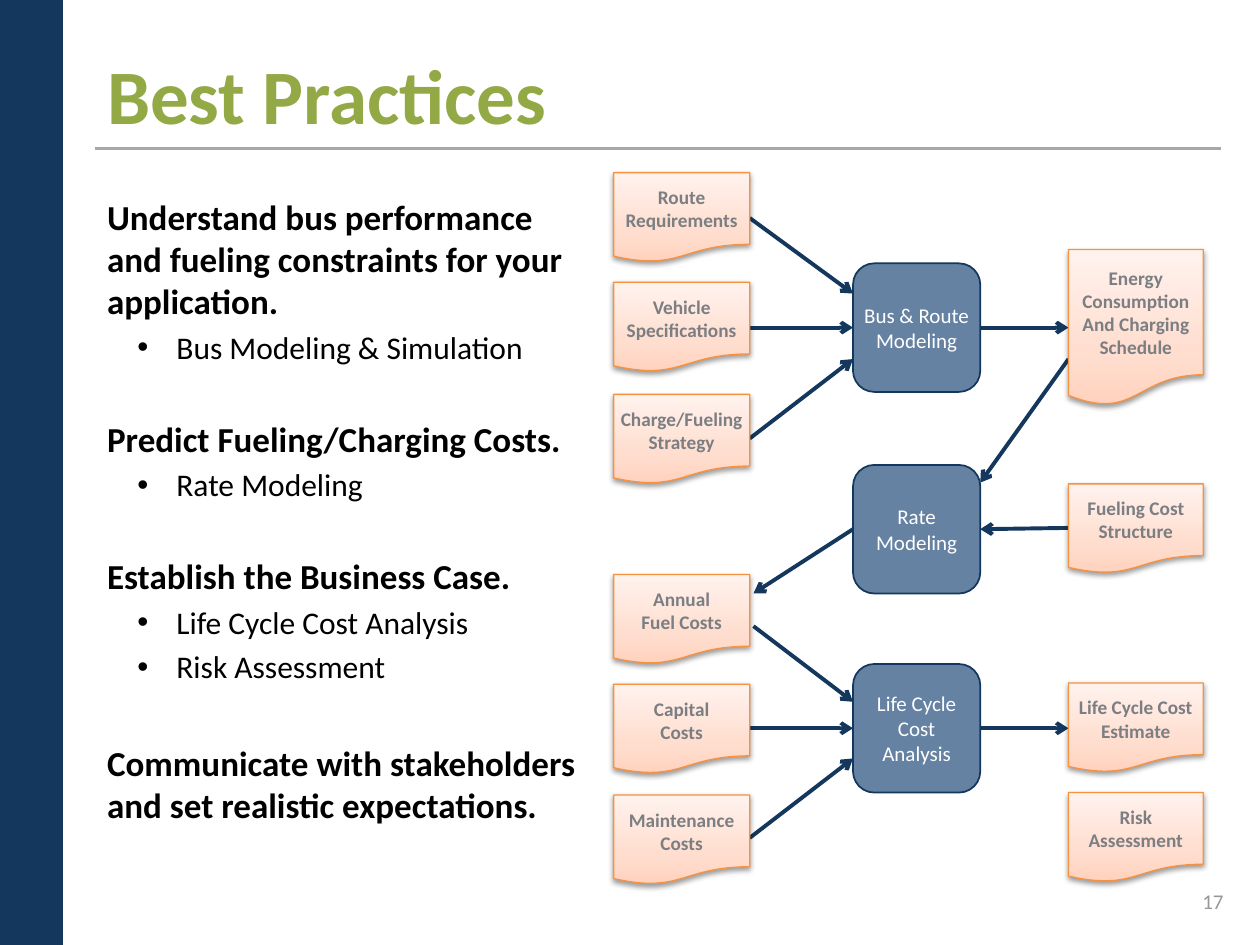
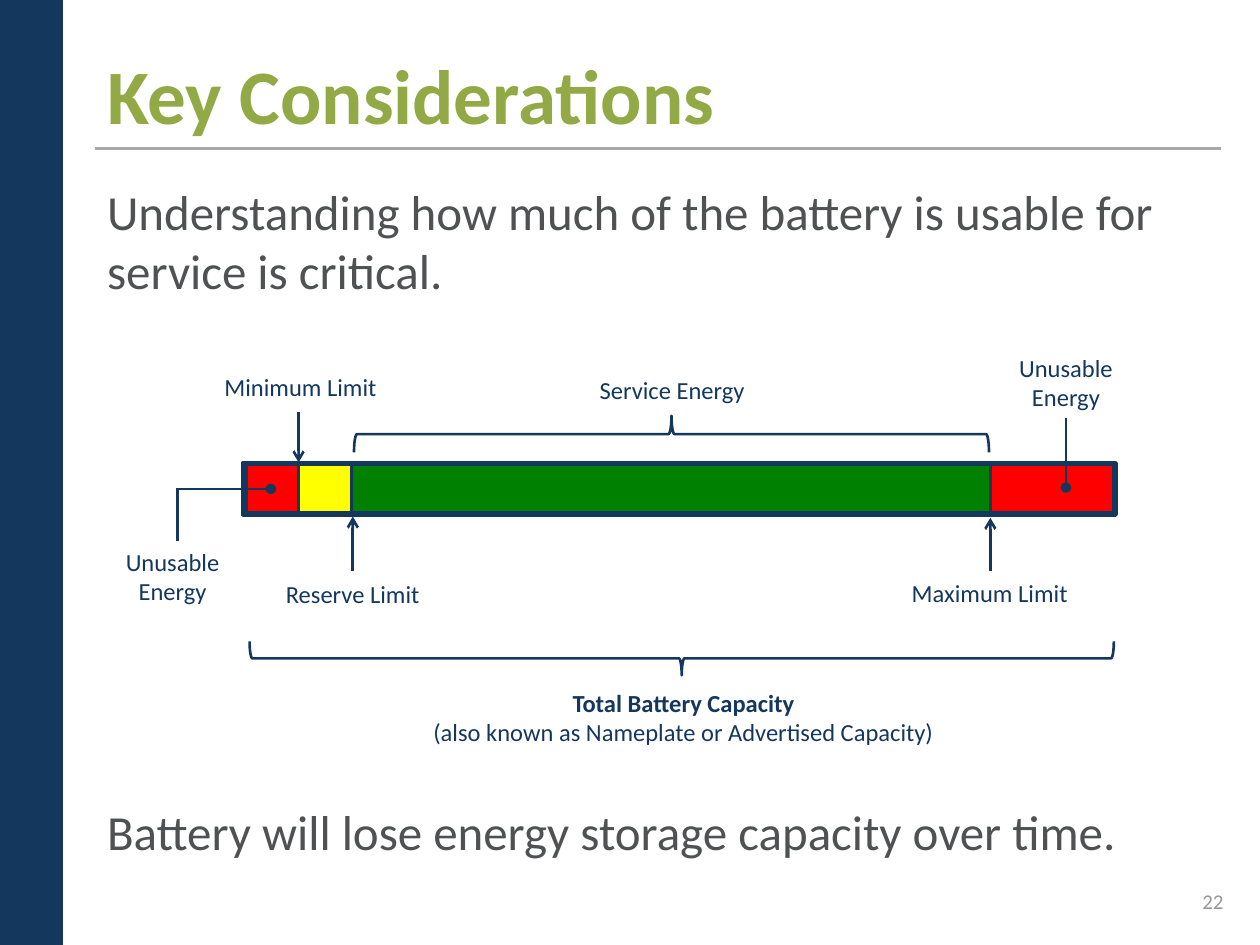
from pptx import Presentation
from pptx.dml.color import RGBColor
from pptx.enum.shapes import MSO_CONNECTOR, MSO_SHAPE as SHAPE
from pptx.enum.text import MSO_ANCHOR as ANCHOR, MSO_AUTO_SIZE as AUTO, PP_ALIGN as ALIGN
from pptx.oxml import parse_xml
from pptx.oxml.ns import nsdecls, qn
from pptx.util import Inches, Pt

FONT = "Calibri"
COLORS = {
    "navy": "14375D", "green": "92A945", "rule": "A6A8AB", "page": "989899",
    "black": "000000", "text": "505153", "white": "FFFFFF", "model": "6582A2",
    "doc_line": "F69240", "doc_text": "7B7E82", "unusable": "FF0000",
    "reserve": "FFFF00", "service": "008000",
}
DOC_STOPS = ((0, "FFD2BD"), (35, "FFDED0"), (100, "FFF2ED"))


def rgb(name):
    """Look a colour up by name."""
    return RGBColor.from_string(COLORS[name])


def xml(tag, inner="", **attrs):
    """Build one DrawingML element."""
    listed = " ".join(f'{k}="{v}"' for k, v in attrs.items())
    return parse_xml(f'<a:{tag} {nsdecls("a")} {listed}>{inner}</a:{tag}>')


def style(p, size, color, bold=False, align=ALIGN.LEFT):
    """Format a paragraph and its runs."""
    p.alignment = align
    for r in p.runs:
        r.font.name, r.font.size, r.font.bold = FONT, Pt(size), bold
        r.font.color.rgb = rgb(color)


def place(sp, x, y, w, h):
    """Move a shape to a box given in inches."""
    sp.left, sp.top, sp.width, sp.height = map(Inches, (x, y, w, h))


def add_shape(s, kind, x, y, w, h, fill=None, line=None, weight=1):
    """Add a flat preset shape."""
    sp = s.shapes.add_shape(kind, *map(Inches, (x, y, w, h)))
    sp.shadow.inherit = False
    if fill:
        sp.fill.solid()
        sp.fill.fore_color.rgb = rgb(fill)
    else:
        sp.fill.background()
    if line:
        sp.line.color.rgb, sp.line.width = rgb(line), Pt(weight)
    else:
        sp.line.fill.background()
    return sp


def add_line(s, x1, y1, x2, y2, weight, color="navy", end=None):
    """Add a straight line with an optional end mark."""
    c = s.shapes.add_connector(MSO_CONNECTOR.STRAIGHT, *map(Inches, (x1, y1, x2, y2)))
    c.line.color.rgb, c.line.width = rgb(color), Pt(weight)
    if end:
        c.line._get_or_add_ln().append(xml("tailEnd", type=end))
    c._element.spPr.append(xml("effectLst"))


def add_label(s, text, x, y, w, h, size=14, color="navy", align=ALIGN.CENTER):
    """Add a wrapped text box."""
    tf = s.shapes.add_textbox(*map(Inches, (x, y, w, h))).text_frame
    tf.word_wrap = True
    tf.text = text
    for p in tf.paragraphs:
        style(p, size, color, align=align)
    return tf


def add_node(s, kind, text, box, size, color, bold=False, **look):
    """Add a shape with centred, unwrapped text."""
    sp = add_shape(s, kind, *box, **look)
    tf = sp.text_frame
    tf.word_wrap, tf.vertical_anchor = False, ANCHOR.MIDDLE
    tf.text = text
    for p in tf.paragraphs:
        style(p, size, color, bold, ALIGN.CENTER)
    return sp


def add_document(s, text, *box):
    """Add a document shape with a gradient and a soft shadow."""
    sp = add_node(s, SHAPE.FLOWCHART_DOCUMENT, text, box, 11, "doc_text", True,
                  line="doc_line", weight=0.75)
    sp.fill.gradient()
    sp.fill.gradient_angle = 90
    pr = sp._element.spPr
    stops = pr.find(".//" + qn("a:gsLst"))
    for old in list(stops):
        stops.remove(old)
    for pos, color in DOC_STOPS:
        stops.append(xml("gs", f'<a:srgbClr val="{color}"/>', pos=pos * 1000))
    pr.find(qn("a:effectLst")).append(xml(
        "outerShdw", '<a:srgbClr val="000000"><a:alpha val="38000"/></a:srgbClr>',
        blurRad=Pt(3.1), dist=Pt(1.6), dir=5400000, rotWithShape=0))


def add_brace(s, x, y, w, h, rotation):
    """Add a brace lying along the given box."""
    sp = add_shape(s, SHAPE.RIGHT_BRACE, x + (w - h) / 2, y + (h - w) / 2, h, w,
                   line="navy", weight=1.5)
    sp.rotation = rotation


def new_slide(prs, title, number):
    """Add a slide with side band, title, rule and page number."""
    s = prs.slides.add_slide(prs.slide_layouts[1])
    add_shape(s, SHAPE.RECTANGLE, 0, 0, 0.5, 7.5, "navy")
    add_line(s, 0.75, 1.18, 9.69, 1.18, 2, "rule")
    place(s.shapes.title, 0.75, 0.3, 8.03, 0.88)
    tf = s.shapes.title.text_frame
    tf.text = title
    tf.auto_size = AUTO.NONE
    style(tf.paragraphs[0], 44, "green", True)
    page = add_label(s, number, 7.48, 6.95, 2.33, 0.4, 12, "page", ALIGN.RIGHT)
    page.vertical_anchor = ANCHOR.MIDDLE
    return s


def fill_body(s, box, items, color):
    """Fill the body with (text, size, bold, bulleted, space before) items."""
    body = s.placeholders[1]
    place(body, *box)
    tf = body.text_frame
    tf.auto_size = AUTO.NONE
    tf.text = "\n".join(item[0] for item in items)
    for p, (_, size, bold, bulleted, before) in zip(tf.paragraphs, items):
        pr = p._p.get_or_add_pPr()
        pr.set("marL", str(Inches(0.55 if bulleted else 0)))
        pr.set("indent", str(Inches(-0.31 if bulleted else 0)))
        if bulleted:
            p.level = 1
            pr.append(xml("buFont", typeface="Arial"))
            pr.append(xml("buChar", char="•"))
        else:
            pr.append(xml("buNone"))
        p.space_before = Pt(before)
        style(p, size, color, bold)


def draw_flow(s, x, y):
    """Draw the modeling flow from its top left corner."""
    left, model_in, model_out, right = 1.09, 1.91, 2.92, 3.62
    links = (
        (left, 0.36, model_in, 0.96), (left, 1.23, model_in, 1.23),
        (left, 2.11, model_in, 1.48), (model_out, 1.23, right, 1.23),
        (right, 1.48, model_out, 2.46), (right, 2.82, model_out, 2.83),
        (model_in, 2.83, 1.12, 3.34), (1.12, 3.6, model_in, 4.2),
        (left, 4.41, model_in, 4.41), (left, 5.28, model_in, 4.65),
        (model_out, 4.41, right, 4.41),
    )
    models = (("Bus & Route\nModeling", 0.72), ("Rate\nModeling", 2.32),
              ("Life Cycle\nCost\nAnalysis", 3.9))
    inputs = (("Route\nRequirements", 0), ("Vehicle\nSpecifications", 0.87),
              ("Charge/Fueling\nStrategy", 1.76), ("Annual\nFuel Costs", 3.19),
              ("Capital\nCosts", 4.06), ("Maintenance\nCosts", 4.94))
    results = (("Energy\nConsumption\nAnd Charging\nSchedule", 0.61, 1.24),
               ("Fueling Cost\nStructure", 2.47, 0.71),
               ("Life Cycle Cost\nEstimate", 4.05, 0.71),
               ("Risk\nAssessment", 4.92, 0.71))
    for x1, y1, x2, y2 in links:
        add_line(s, x + x1, y + y1, x + x2, y + y2, 2.25, end="arrow")
    for text, dy in models:
        add_node(s, SHAPE.ROUNDED_RECTANGLE, text, (x + model_in, y + dy, 1.01, 1.02),
                 12, "white", fill="model", line="navy")
    for text, dy in inputs:
        add_document(s, text, x + 0.01, y + dy, 1.08, 0.71)
    for text, dy, h in results:
        add_document(s, text, x + right, y + dy, 1.07, h)


def draw_battery(s, x, y):
    """Draw the battery bar at a corner, with its limits and labels."""
    edges = (0, 0.44, 0.86, 5.93, 6.92)
    fills = ("unusable", "reserve", "service", "unusable")
    for start, stop, fill in zip(edges, edges[1:], fills):
        add_shape(s, SHAPE.RECTANGLE, x + start, y, stop - start, 0.42, fill, "navy", 2)
    add_shape(s, SHAPE.RECTANGLE, x + 0.02, y + 0.01, 6.9, 0.4, line="navy", weight=3)
    add_brace(s, x + 0.88, y - 0.37, 5.04, 0.29, 270)
    add_brace(s, x + 0.05, y + 1.42, 6.86, 0.27, 90)
    marks = (
        (0.44, -0.4, 0.44, 0, "arrow"), (0.87, 0.86, 0.87, 0.43, "arrow"),
        (5.93, 0.86, 5.93, 0.44, "arrow"), (6.53, -0.35, 6.53, 0.2, "oval"),
        (-0.53, 0.21, 0.22, 0.21, "oval"), (-0.52, 0.62, -0.52, 0.2, None),
    )
    for x1, y1, x2, y2, end in marks:
        add_line(s, x + x1, y + y1, x + x2, y + y2, 1.5, end=end)
    labels = (
        ("Service Energy", 2.44, -0.74, 1.93, 0.34),
        ("Minimum Limit", -0.39, -0.77, 1.69, 0.34),
        ("Reserve Limit", -0.01, 0.88, 1.76, 0.34),
        ("Maximum Limit", 5.08, 0.87, 1.69, 0.34),
        ("Unusable\nEnergy", 5.99, -0.92, 1.08, 0.57),
        ("Unusable\nEnergy", -1.1, 0.62, 1.08, 0.57),
    )
    for text, dx, dy, w, h in labels:
        add_label(s, text, x + dx, y + dy, w, h)
    total = add_label(
        s, "Total Battery Capacity\n(also known as Nameplate or Advertised Capacity)",
        x + 0.06, y + 1.74, 6.87, 0.57)
    style(total.paragraphs[0], 14, "navy", True, ALIGN.CENTER)


def best_practices(prs):
    """Build the slide with the practices and the modeling flow."""
    s = new_slide(prs, "Best Practices", "17")
    fill_body(s, (0.75, 1.5, 3.97, 5.73), (
        ("Understand bus performance and fueling constraints for your application.",
         20, True, False, 0),
        ("Bus Modeling & Simulation", 18, False, True, 3.6),
        ("Predict Fueling/Charging Costs.", 20, True, False, 29.5),
        ("Rate Modeling", 18, False, True, 3.6),
        ("Establish the Business Case.", 20, True, False, 29.5),
        ("Life Cycle Cost Analysis", 18, False, True, 3.6),
        ("Risk Assessment", 18, False, True, 3.6),
        ("Communicate with stakeholders and set realistic expectations.",
         20, True, False, 32),
    ), "black")
    draw_flow(s, 4.86, 1.37)


def key_considerations(prs):
    """Build the slide with the usable part of the battery."""
    s = new_slide(prs, "Key Considerations", "22")
    fill_body(s, (0.75, 1.39, 8.75, 5.81), (
        ("Understanding how much of the battery is usable for service is critical.",
         28, False, False, 0),
        ("Battery will lose energy storage capacity over time.", 28, False, False, 287),
    ), "text")
    draw_battery(s, 1.93, 3.67)


def main():
    """Build and save the presentation."""
    prs = Presentation()
    prs.slide_width, prs.slide_height = Inches(10), Inches(7.5)
    best_practices(prs)
    key_considerations(prs)
    prs.save("out.pptx")


if __name__ == "__main__":
    main()
